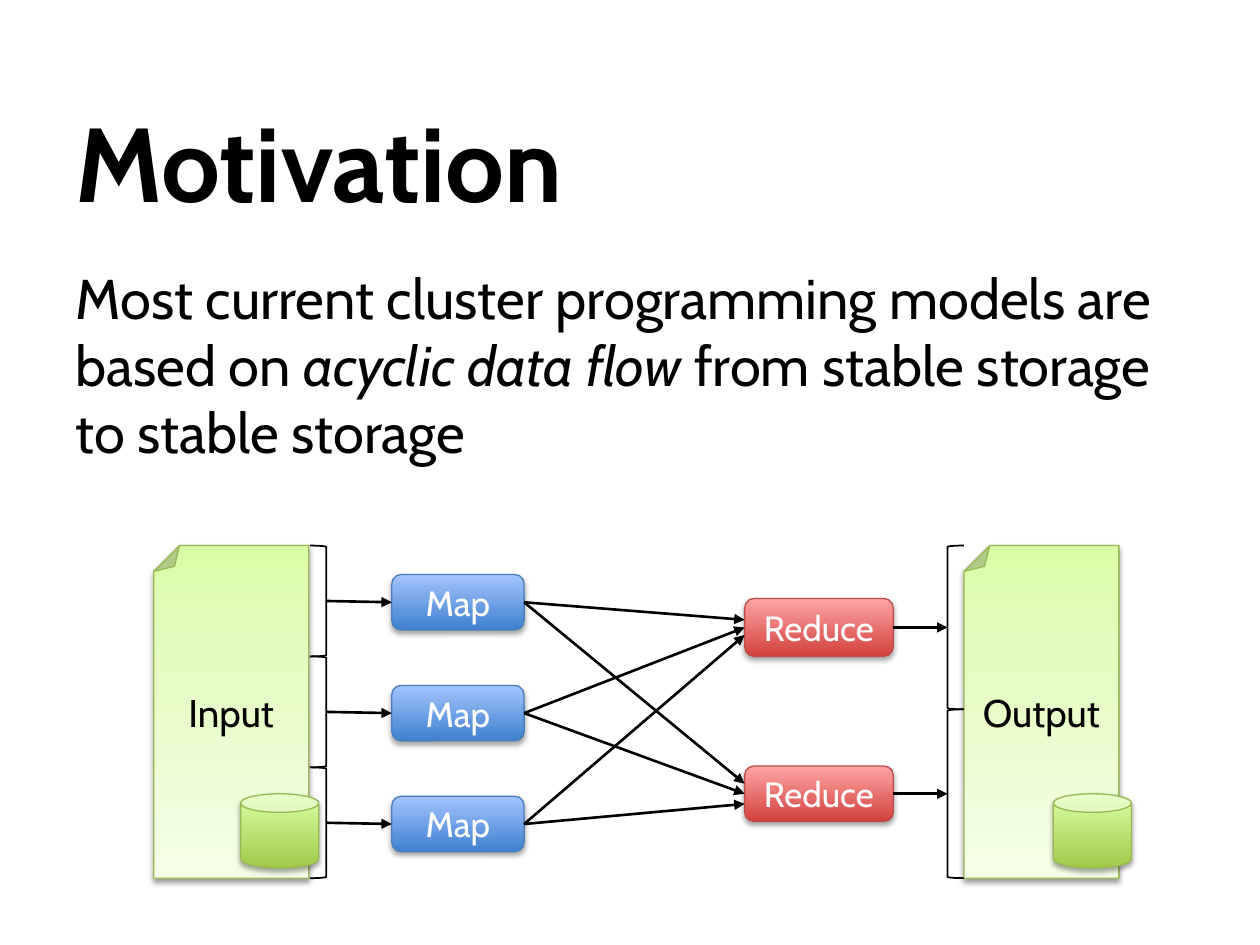
from pptx import Presentation
from pptx.dml.color import RGBColor
from pptx.enum.shapes import MSO_CONNECTOR, MSO_SHAPE
from pptx.enum.text import MSO_ANCHOR, PP_ALIGN
from pptx.oxml.ns import qn
from pptx.util import Inches, Pt
from lxml.etree import SubElement

FONT = "Cabin"
COLORS = {"ink": "000000", "paper": "FFFFFF", "green_line": "98B955",
          "blue_line": "4B7EBC", "red_line": "BF4C48"}
GRADIENTS = {
    "file": [(0, "DAFDA7"), (35, "E4FCC2"), (100, "F5FFE7")],
    "disk": [(0, "A0CA4A"), (100, "DAFFA5")],
    "map": [(0, "3F80CE"), (100, "A4C4FF")],
    "reduce": [(0, "D1403C"), (100, "FFA6A5")],
}
TITLE = [("Motivation", False)]
BODY = [("Most current cluster programming models are based on ", False),
        ("acyclic data flow ", True),
        ("from stable storage to stable storage", False)]
FILES = [("Input", 1.22, 1.91), ("Output", 7.65, 8.36)]
MAPS = ["Map", "Map", "Map"]
REDUCES = [("Reduce", 4.75, 0.46, 0.06), ("Reduce", 6.08, 0.44, 0.08)]

TOP, ROW = 4.33, 0.88
HEIGHT = ROW * len(MAPS)
FILE_W, BRACKET_W = 1.23, 0.13
IN_X, OUT_X = 2.46, 7.52
MAP_X, MAP_W, MAP_H = 3.11, 1.05, 0.44
REDUCE_X, REDUCE_W = 5.91, 1.18
SPLIT = 1.3

prs = Presentation()
prs.slide_width, prs.slide_height = Inches(10), Inches(7.5)
slide = prs.slides.add_slide(prs.slide_layouts[6])


def rgb(name):
    return RGBColor.from_string(COLORS[name])


def write(sp, runs, size, color="ink", bold=False, align=PP_ALIGN.LEFT,
          anchor=MSO_ANCHOR.TOP, before=0):
    tf = sp.text_frame
    tf.word_wrap = True
    tf.vertical_anchor = anchor
    p = tf.paragraphs[0]
    p.alignment = align
    p.space_before = Pt(before)
    for text, italic in runs:
        r = p.add_run()
        r.text = text
        f = r.font
        f.name, f.size, f.bold, f.italic = FONT, Pt(size), bold, italic
        f.color.rgb = rgb(color)


def textbox(box, runs, size, **fmt):
    write(slide.shapes.add_textbox(*map(Inches, box)), runs, size, **fmt)


def shape(kind, box, line, width):
    sp = slide.shapes.add_shape(kind, *map(Inches, box))
    sp.fill.background()
    sp.line.color.rgb = rgb(line)
    sp.line.width = Pt(width)
    sp.shadow.inherit = False
    return sp


def add_color(parent, value):
    return SubElement(parent, qn("a:srgbClr"), val=value)


def solid(kind, box, line, gradient, opacity=35, distance=1.8):
    sp = shape(kind, box, line, 0.75)
    sp.fill.gradient()
    sp.fill.gradient_angle = 90
    spPr = sp._element.spPr
    stops = spPr.find(".//" + qn("a:gsLst"))
    for stop in list(stops):
        stops.remove(stop)
    for pos, value in GRADIENTS[gradient]:
        add_color(SubElement(stops, qn("a:gs"), pos=str(pos * 1000)), value)
    shadow = SubElement(spPr.find(qn("a:effectLst")), qn("a:outerShdw"),
                        blurRad=str(Pt(3.1)), dist=str(Pt(distance)),
                        dir="5400000", rotWithShape="0")
    SubElement(add_color(shadow, COLORS["ink"]), qn("a:alpha"),
               val=str(opacity * 1000))
    return sp


def step(label, box, line, gradient):
    sp = solid(MSO_SHAPE.ROUNDED_RECTANGLE, box, line, gradient)
    write(sp, [(label, False)], 20, color="paper", align=PP_ALIGN.CENTER,
          anchor=MSO_ANCHOR.MIDDLE)
    return sp


def bracket(x, y, h, flip=False):
    sp = shape(MSO_SHAPE.RIGHT_BRACKET, (x, y, BRACKET_W, h), "ink", 1)
    if flip:
        sp._element.spPr.find(qn("a:xfrm")).set("flipH", "1")


def arrow(x1, y1, x2, y2, start=None, end=None):
    s = slide.shapes.add_connector(MSO_CONNECTOR.STRAIGHT,
                                   *map(Inches, (x1, y1, x2, y2)))
    if start is not None:
        s.begin_connect(start, 3)
    if end is not None:
        s.end_connect(end, 1)
    s.line.color.rgb = rgb("ink")
    s.line.width = Pt(1.5)
    SubElement(s.line._get_or_add_ln(), qn("a:tailEnd"), type="triangle")
    SubElement(s._element.spPr, qn("a:effectLst"))


textbox((0.5, 0.65, 9, 1.25), TITLE, 60, bold=True, anchor=MSO_ANCHOR.MIDDLE)
textbox((0.5, 2.04, 9, 2.48), BODY, 32, before=20)

for label, x, _ in FILES:
    sp = solid(MSO_SHAPE.FOLDED_CORNER, (x, TOP, FILE_W, HEIGHT),
               "green_line", "file", opacity=38, distance=1.6)
    sp.rotation = 180

maps = []
for i, label in enumerate(MAPS):
    y = TOP + i * ROW
    mid = y + 0.23 + MAP_H / 2
    bracket(IN_X, y, ROW)
    sp = step(label, (MAP_X, y + 0.23, MAP_W, MAP_H), "blue_line", "map")
    arrow(IN_X + BRACKET_W, y + ROW / 2, MAP_X, mid, end=sp)
    maps.append((sp, mid))

order = [0, 1, 2]
for label, y, h, gap in REDUCES:
    mid = y + h / 2
    sp = step(label, (REDUCE_X, y, REDUCE_W, h), "red_line", "reduce")
    for i in order:
        source, source_mid = maps[i]
        arrow(MAP_X + MAP_W, source_mid, REDUCE_X, mid + (i - 1) * gap,
              start=source, end=sp if i == 1 else None)
    arrow(REDUCE_X + REDUCE_W, mid, OUT_X, mid, start=sp)

bracket(OUT_X, TOP, SPLIT, flip=True)
bracket(OUT_X, TOP + SPLIT, HEIGHT - SPLIT, flip=True)

for label, x, disk_x in FILES:
    textbox((x, 5.42, FILE_W, 0.46), [(label, False)], 22,
            align=PP_ALIGN.CENTER)
    solid(MSO_SHAPE.CAN, (disk_x, 6.3, 0.62, 0.59), "green_line", "disk")

prs.save("out.pptx")
